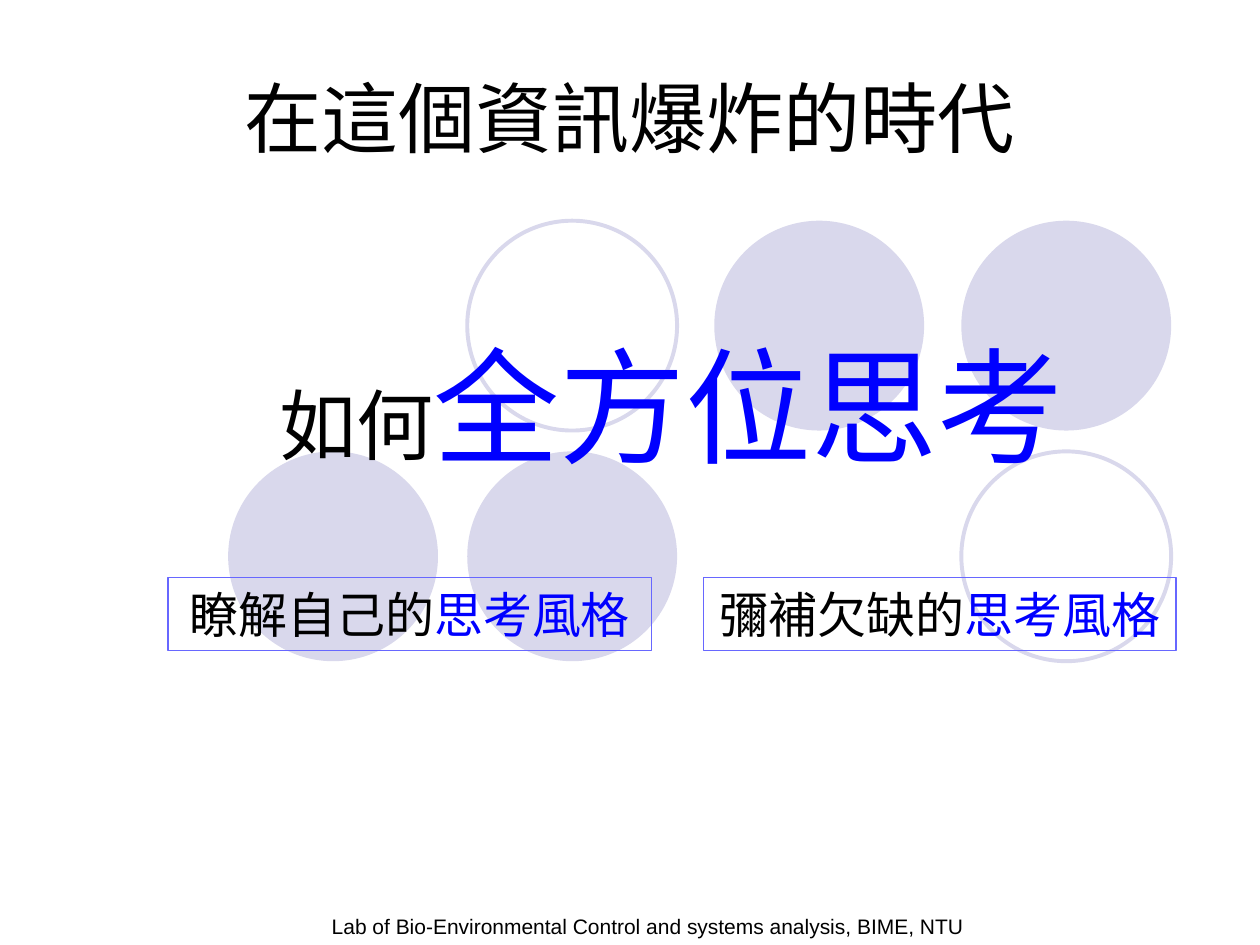
from dataclasses import dataclass
from typing import NamedTuple

from lxml.etree import SubElement
from pptx import Presentation
from pptx.dml.color import RGBColor
from pptx.enum.shapes import MSO_SHAPE as Preset
from pptx.enum.text import MSO_ANCHOR as Anchor, MSO_AUTO_SIZE as AutoSize, PP_ALIGN as Align
from pptx.oxml.ns import qn
from pptx.util import Cm, Pt


@dataclass(frozen=True)
class Theme:
    black: RGBColor = RGBColor(0x00, 0x00, 0x00)
    blue: RGBColor = RGBColor(0x00, 0x00, 0xFF)
    frame: RGBColor = RGBColor(0x67, 0x67, 0xFF)
    lavender: RGBColor = RGBColor(0xD9, 0xD8, 0xEC)
    latin_font: str = "Arial"
    chinese_font: str = "Noto Sans CJK SC"
    heading_size: int = 44
    emphasis_size: int = 72
    box_size: int = 28
    footer_size: int = 12


class Box(NamedTuple):
    """Position and size in centimetres."""
    left: float
    top: float
    width: float
    height: float

    def lengths(self) -> list:
        return [Cm(value) for value in self]


class Circle(NamedTuple):
    column: int
    row: int
    filled: bool


class Words(NamedTuple):
    text: str
    size: int
    color: RGBColor
    font: str


class StyleBox(NamedTuple):
    lead: str
    box: Box


THEME = Theme()
CIRCLE_SIZE = 4.23
CIRCLE_COLUMNS = (4.6, 9.42, 14.4, 19.38)
CIRCLE_ROWS = (4.45, 9.1)
CIRCLES = (
    Circle(3, 0, True), Circle(2, 0, True), Circle(1, 0, False),
    Circle(1, 1, True), Circle(0, 1, True), Circle(3, 1, False),
)
HEADING_BOX = Box(1.27, 0.76, 22.86, 3.18)
TITLE_BOX = Box(2.75, 6.35, 21.59, 3.45)
FOOTER_BOX = Box(5.72, 17.36, 13.97, 1.69)
STYLE_BOXES = (
    StyleBox("瞭解自己的", Box(3.39, 11.64, 9.74, 1.48)),
    StyleBox("彌補欠缺的", Box(14.18, 11.64, 9.53, 1.48)),
)


def plain(text: str, size: int) -> Words:
    return Words(text, size, THEME.black, THEME.latin_font)


def write(shape, words: list[Words], anchor: Anchor, align: Align = Align.CENTER) -> None:
    frame = shape.text_frame
    frame.word_wrap = True
    frame.auto_size = AutoSize.NONE
    frame.vertical_anchor = anchor
    paragraph = frame.paragraphs[0]
    paragraph.alignment = align
    for part in words:
        run = paragraph.add_run()
        run.text = part.text
        run.font.size = Pt(part.size)
        run.font.color.rgb = part.color
        run.font.name = part.font
        east_asian = SubElement(run.font._element, qn("a:ea"))
        east_asian.set("typeface", THEME.chinese_font)


def add_outline(slide, preset: Preset, box: Box, color: RGBColor, weight: float):
    shape = slide.shapes.add_shape(preset, *box.lengths())
    shape.shadow.inherit = False
    shape.fill.background()
    shape.line.color.rgb = color
    shape.line.width = Pt(weight)
    return shape


def add_circle(slide, circle: Circle) -> None:
    box = Box(CIRCLE_COLUMNS[circle.column], CIRCLE_ROWS[circle.row], CIRCLE_SIZE, CIRCLE_SIZE)
    shape = add_outline(slide, Preset.OVAL, box, THEME.lavender, 2.25)
    if circle.filled:
        shape.fill.solid()
        shape.fill.fore_color.rgb = THEME.lavender
        shape.line.fill.background()


def add_text(slide, box: Box, words: Words, anchor: Anchor, align: Align) -> None:
    write(slide.shapes.add_textbox(*box.lengths()), [words], anchor, align)


def place_title(slide) -> None:
    """Put the title placeholder in front of the circles."""
    title = slide.shapes.title
    title.left, title.top, title.width, title.height = TITLE_BOX.lengths()
    slide.shapes.element.append(title.element)
    write(title, [
        plain("如何", THEME.heading_size),
        Words("全方位思考", THEME.emphasis_size, THEME.blue, THEME.chinese_font),
    ], Anchor.BOTTOM)


def add_style_box(slide, item: StyleBox) -> None:
    shape = add_outline(slide, Preset.RECTANGLE, item.box, THEME.frame, 0.75)
    write(shape, [
        plain(item.lead, THEME.box_size),
        Words("思考風格", THEME.box_size, THEME.blue, THEME.latin_font),
    ], Anchor.MIDDLE)


def main() -> None:
    presentation = Presentation()
    presentation.slide_width, presentation.slide_height = Cm(25.4), Cm(19.05)
    slide = presentation.slides.add_slide(presentation.slide_layouts[5])
    for circle in CIRCLES:
        add_circle(slide, circle)
    footer = plain("Lab of Bio-Environmental Control and systems analysis, BIME, NTU", THEME.footer_size)
    add_text(slide, FOOTER_BOX, footer, Anchor.BOTTOM, Align.RIGHT)
    place_title(slide)
    for item in STYLE_BOXES:
        add_style_box(slide, item)
    heading = plain("在這個資訊爆炸的時代", THEME.heading_size)
    add_text(slide, HEADING_BOX, heading, Anchor.MIDDLE, Align.CENTER)
    presentation.save("out.pptx")


if __name__ == "__main__":
    main()
